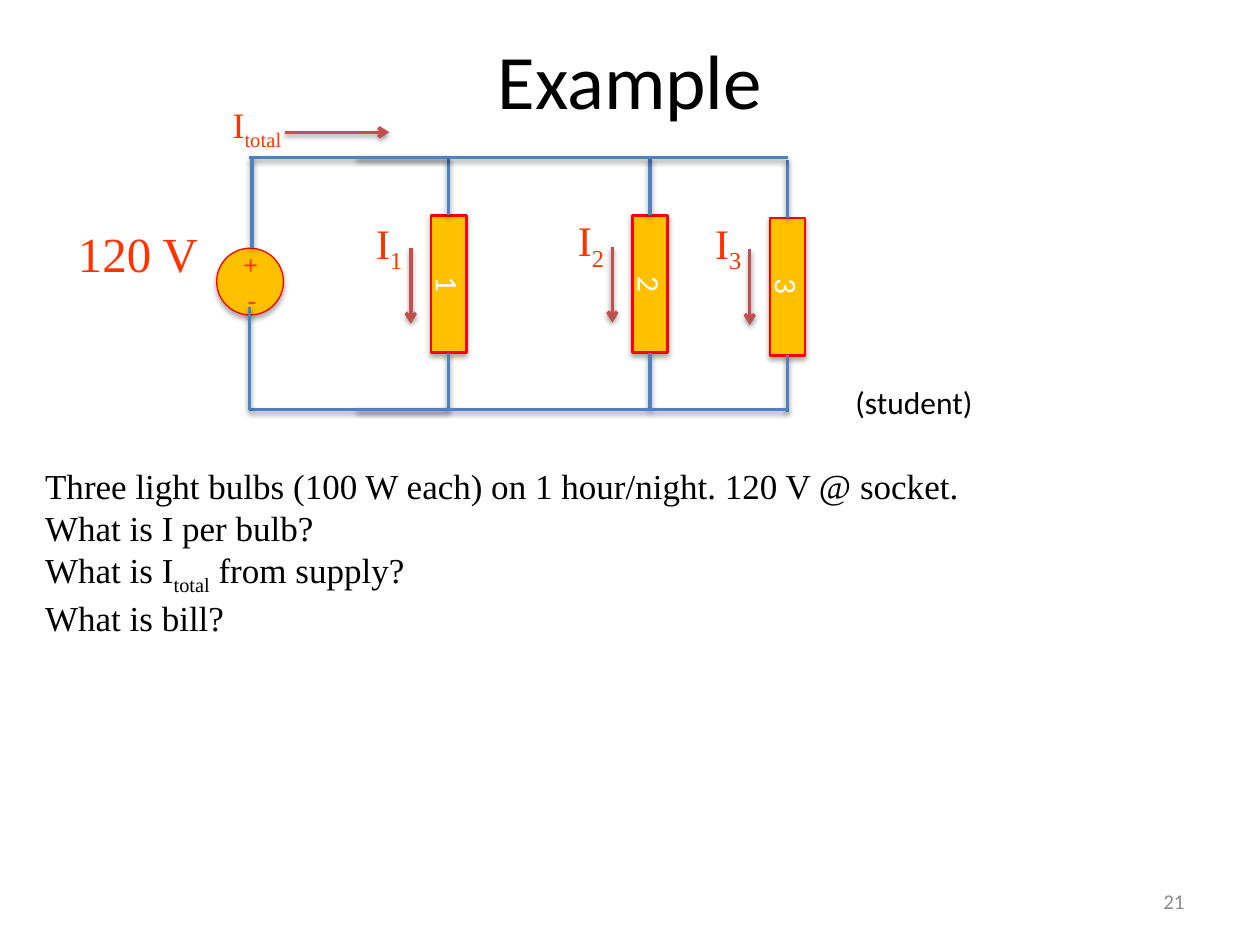
"""Build a slide with a parallel light bulb circuit and its questions."""
from lxml.etree import SubElement
from pptx import Presentation
from pptx.dml.color import RGBColor
from pptx.enum.shapes import MSO_CONNECTOR, MSO_SHAPE
from pptx.enum.text import MSO_ANCHOR, PP_ALIGN
from pptx.oxml.ns import qn
from pptx.util import Inches, Pt

BLACK = RGBColor(0x00, 0x00, 0x00)
WHITE = RGBColor(0xFF, 0xFF, 0xFF)
GRAY = RGBColor(0x8C, 0x8C, 0x8C)
AMBER = RGBColor(0xFF, 0xC0, 0x00)
RED = RGBColor(0xFF, 0x00, 0x00)
ORANGE = RGBColor(0xFF, 0x33, 0x00)
WIRE_BLUE = RGBColor(0x4F, 0x81, 0xBD)
ARROW_RED = RGBColor(0xC0, 0x50, 0x4D)
SANS, SERIF = "Calibri", "Times New Roman"

QUESTIONS = [
    [("Three light bulbs (100 W each) on 1 hour/night. 120 V @ socket.", False)],
    [("What is I per bulb?", False)],
    [("What is I", False), ("total", True), (" from supply?", False)],
    [("What is bill?", False)],
]
BULBS = [
    {"name": "1", "center": 3.56, "drop": 0, "arrow_top": 1.97, "label_top": 1.71},
    {"name": "2", "center": 5.16, "drop": 0, "arrow_top": 1.96, "label_top": 1.69},
    {"name": "3", "center": 6.25, "drop": 0.02, "arrow_top": 1.98, "label_top": 1.71},
]
TOP, BOTTOM, LEFT, RIGHT = 1.25, 3.25, 1.98, 6.25
BULB_TOP, BULB_LENGTH, BULB_WIDTH = 1.71, 1.09, 0.28
SOURCE_WIRES = [
    (2.83, BOTTOM, 3.56, BOTTOM),
    (2.83, TOP, 3.56, TOP),
    (LEFT, BOTTOM, RIGHT, BOTTOM),
    (LEFT, TOP, RIGHT, TOP),
    (LEFT, BOTTOM, LEFT, 2.44),
    (2, 1.97, 2, TOP),
]


def add_shadow(item, opacity, distance):
    effects = SubElement(item._element.spPr, qn("a:effectLst"))
    shadow = SubElement(
        effects, qn("a:outerShdw"), blurRad=str(Pt(3.1)), dist=str(Pt(distance)),
        dir="5400000", rotWithShape="0")
    color = SubElement(shadow, qn("a:srgbClr"), val=str(BLACK))
    SubElement(color, qn("a:alpha"), val=str(opacity * 1000))


def write(box, lines, size, font, color, align=PP_ALIGN.CENTER, bold=False):
    frame = box.text_frame
    for index, pieces in enumerate(lines):
        para = frame.paragraphs[0] if index == 0 else frame.add_paragraph()
        para.alignment = align
        para.font.size, para.font.name = Pt(size), font
        para.font.color.rgb, para.font.bold = color, bold
        for text, lowered in pieces:
            span = para.add_run()
            span.text = text
            if lowered:
                span.font._element.set("baseline", "-25000")


def add_text(shapes, place, lines, size, font, color, align=PP_ALIGN.CENTER,
             anchor=MSO_ANCHOR.MIDDLE, wrap=True, inset=0.1, bold=False):
    box = shapes.add_textbox(*map(Inches, place))
    frame = box.text_frame
    frame.word_wrap = wrap
    frame.vertical_anchor = anchor
    frame.margin_left = frame.margin_right = Inches(inset)
    write(box, lines, size, font, color, align, bold)


def add_label(shapes, place, symbol, subscript, size):
    add_text(shapes, place, [[(symbol, False), (subscript, True)]],
             size, SERIF, ORANGE, inset=0)


def add_part(shapes, kind, place, line_width):
    part = shapes.add_shape(kind, *map(Inches, place))
    part.fill.solid()
    part.fill.fore_color.rgb = AMBER
    part.line.color.rgb = RED
    part.line.width = Pt(line_width)
    add_shadow(part, 35, 1.8)
    return part


def add_line(shapes, ends, color=WIRE_BLUE, arrow=False):
    line = shapes.add_connector(MSO_CONNECTOR.STRAIGHT, *map(Inches, ends))
    line.line.color.rgb = color
    line.line.width = Pt(2)
    if arrow:
        SubElement(line.line._get_or_add_ln(), qn("a:tailEnd"), type="arrow")
    add_shadow(line, 38, 1.6)


def add_bulb(shapes, bulb):
    center, drop = bulb["center"], bulb["drop"]
    top = BULB_TOP + drop
    end = top + BULB_LENGTH
    middle = top + BULB_LENGTH / 2
    place = (center - BULB_LENGTH / 2, middle - BULB_WIDTH / 2, BULB_LENGTH, BULB_WIDTH)
    part = add_part(shapes, MSO_SHAPE.RECTANGLE, place, 1.5)
    part.rotation = 90
    part.text_frame.vertical_anchor = MSO_ANCHOR.MIDDLE
    write(part, [[(bulb["name"], False)]], 18, SANS, WHITE)
    add_line(shapes, (center, BOTTOM + drop, center, end))
    add_line(shapes, (center, top, center, TOP + drop))
    arrow_x, arrow_top = center - 0.3, bulb["arrow_top"]
    add_line(shapes, (arrow_x, arrow_top, arrow_x, arrow_top + 0.6), ARROW_RED, True)
    add_label(shapes, (center - 0.79, bulb["label_top"], 0.64, 0.48), "I", bulb["name"], 24)


def add_source(shapes):
    group = shapes.add_group_shape().shapes
    add_part(group, MSO_SHAPE.OVAL, (1.72, 1.97, 0.53, 0.53), 0.75)
    for sign, left, top, bold in [("+", 1.86, 1.93, True), ("-", 1.87, 2.21, False)]:
        add_text(group, (left, top, 0.26, 0.33), [[(sign, False)]],
                 14.8, SERIF, ORANGE, inset=0, bold=bold)


def main():
    deck = Presentation()
    deck.slide_width, deck.slide_height = Inches(10), Inches(7.5)
    shapes = deck.slides.add_slide(deck.slide_layouts[6]).shapes

    add_text(shapes, (0.5, 0, 9, 1.25), [[("Example", False)]], 44, SANS, BLACK)
    add_text(shapes, (0.47, 1.5, 1.25, 1.01), [[("120 V", False)]], 28, SERIF, ORANGE)
    add_source(shapes)
    for bulb in BULBS:
        add_bulb(shapes, bulb)
    for ends in SOURCE_WIRES:
        add_line(shapes, ends)
    add_line(shapes, (2.26, 1.05, 3.09, 1.05), ARROW_RED, True)
    add_label(shapes, (1.72, 0.77, 0.64, 0.48), "I", "total", 20.4)
    add_text(shapes, (0.26, 3.64, 7.57, 1.45), QUESTIONS, 20, SERIF, BLACK,
             PP_ALIGN.LEFT, MSO_ANCHOR.TOP, False)
    add_text(shapes, (6.69, 2.99, 1.14, 0.4), [[("(student)", False)]], 18, SANS, BLACK,
             PP_ALIGN.LEFT, MSO_ANCHOR.TOP, False)
    add_text(shapes, (7.17, 6.95, 2.33, 0.4), [[("21", False)]], 12, SANS, GRAY,
             PP_ALIGN.RIGHT)
    deck.save("out.pptx")


if __name__ == "__main__":
    main()
